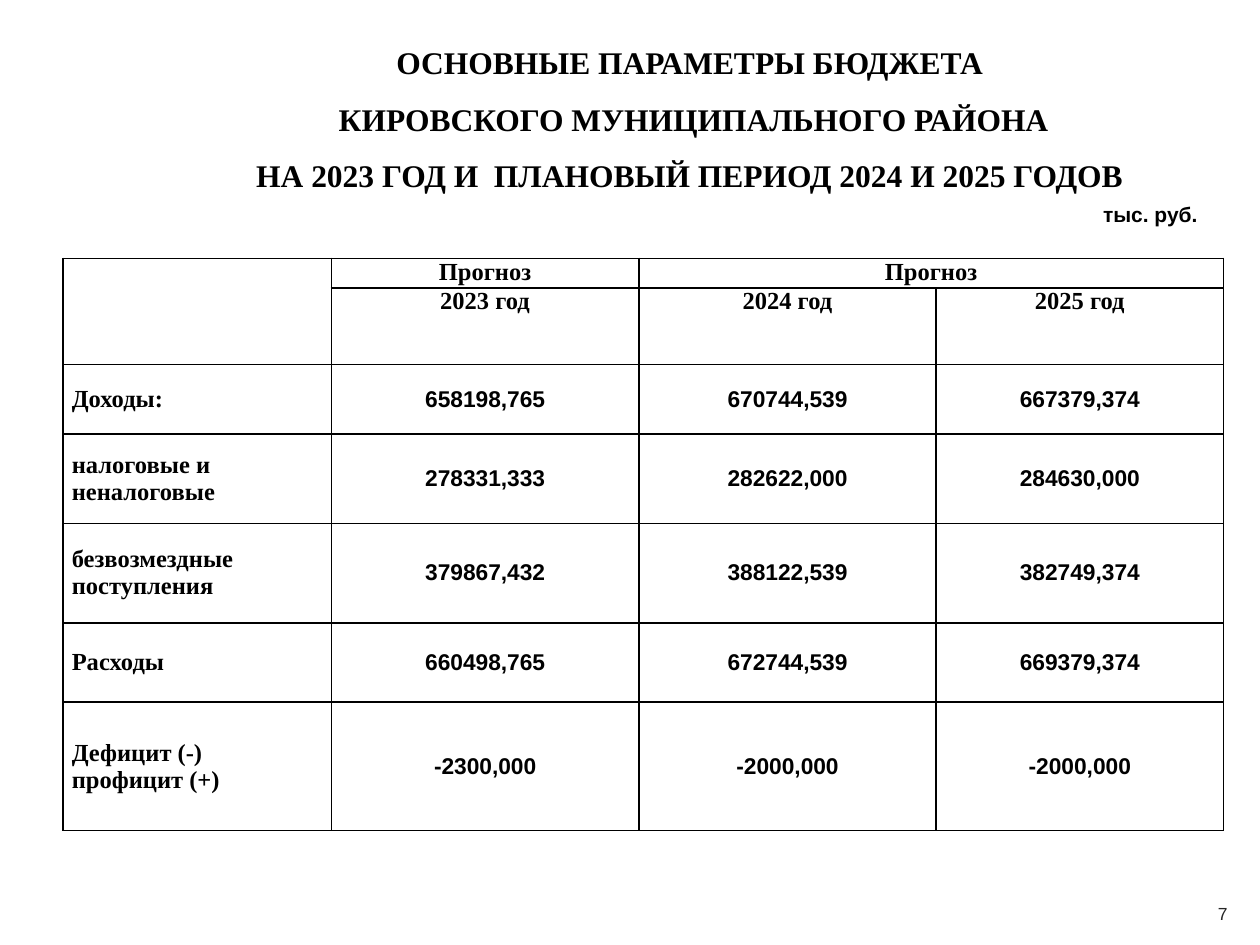
"""Build the slide with the main figures of the district budget."""
from dataclasses import dataclass

from lxml import etree
from pptx import Presentation, util as u
from pptx.dml.color import RGBColor
from pptx.enum import text
from pptx.oxml import ns

WIDE, HIGH = 10, 7.5
SERIF, SANS = "Times New Roman", "Arial"
INK, GREY, PAPER = "000000", "262626", "FFFFFF"
MID, LEFT, FULL = text.PP_ALIGN.CENTER, text.PP_ALIGN.LEFT, text.PP_ALIGN.JUSTIFY
COLS = (2.13, 2.44, 2.36, 2.28)
ROWS = (0.23, 0.61, 0.55, 0.71, 0.79, 0.63, 1.02)
SIDES = ("a:lnL", "a:lnR", "a:lnT", "a:lnB")


@dataclass(frozen=True)
class Style:
    """Look of a run of text and of its paragraph."""
    font: str
    size: float
    tone: str = INK
    bold: bool = True
    align: int = MID
    space: float = 1.0


@dataclass(frozen=True)
class Box:
    """Text box placed by shares of the slide's size."""
    left: float
    top: float
    width: float
    height: float
    lines: tuple
    style: Style
    wrap: bool = True
    grow: bool = True
    anchor: int = text.MSO_ANCHOR.TOP


@dataclass(frozen=True)
class Line:
    """Row of the table: its label, its values and the value margin."""
    label: tuple
    values: tuple
    align: int = LEFT
    inset: float = 0.07


BOXES = (
    Box(0.945, 0.94, 0.051, 0.053, ("7",), Style(SANS, 10, GREY, False),
        grow=False, anchor=text.MSO_ANCHOR.MIDDLE),
    Box(0.127, 0.019, 0.841, 0.195,
        ("ОСНОВНЫЕ ПАРАМЕТРЫ БЮДЖЕТА",
         " КИРОВСКОГО МУНИЦИПАЛЬНОГО РАЙОНА",
         "НА 2023 ГОД И  ПЛАНОВЫЙ ПЕРИОД 2024 И 2025 ГОДОВ"),
        Style(SERIF, 18, space=1.5)),
    Box(0.865, 0.207, 0.096, 0.04, ("тыс. руб.",), Style(SANS, 12), wrap=False),
)
HEADS = (("Прогноз", "Прогноз"), ("2023 год", "2024 год", "2025 год"))
LINES = (
    Line(("Доходы:",), ("658198,765", "670744,539", "667379,374"), FULL, 0.01),
    Line(("налоговые и неналоговые",),
         ("278331,333", "282622,000", "284630,000"), inset=0.01),
    Line(("безвозмездные поступления",),
         ("379867,432", "388122,539", "382749,374"), inset=0.01),
    Line(("Расходы",), ("660498,765", "672744,539", "669379,374"), FULL),
    Line(("Дефицит (-)", "профицит (+)"),
         ("-2300,000", "-2000,000", "-2000,000")),
)


def color(tone: str) -> RGBColor:
    """Turn a hex string into a colour."""
    return RGBColor.from_string(tone)


def write(frame, lines: tuple, style: Style) -> None:
    """Fill a text frame, one paragraph and run per line."""
    for i, words in enumerate(lines):
        para = frame.add_paragraph() if i else frame.paragraphs[0]
        para.alignment = style.align
        para.line_spacing = style.space
        run = para.add_run()
        run.text = words
        font = run.font
        font.name, font.size, font.bold = style.font, u.Pt(style.size), style.bold
        font.color.rgb = color(style.tone)


def draw_box(slide, box: Box) -> None:
    """Draw one text box."""
    shape = slide.shapes.add_textbox(
        u.Inches(box.left * WIDE), u.Inches(box.top * HIGH),
        u.Inches(box.width * WIDE), u.Inches(box.height * HIGH))
    frame = shape.text_frame
    frame.word_wrap = box.wrap
    frame.vertical_anchor = box.anchor
    if box.grow:
        frame.auto_size = text.MSO_AUTO_SIZE.SHAPE_TO_FIT_TEXT
    write(frame, box.lines, box.style)


def edge(cell) -> None:
    """Clear a cell's margins and fill, and rule its four sides."""
    cell.margin_left = cell.margin_right = u.Inches(0.07)
    cell.margin_top = cell.margin_bottom = 0
    props = cell._tc.get_or_add_tcPr()
    for side in SIDES:
        rule = etree.SubElement(props, ns.qn(side), w=str(u.Pt(1)))
        fill = etree.SubElement(rule, ns.qn("a:solidFill"))
        etree.SubElement(fill, ns.qn("a:srgbClr"), val=INK)
    cell.fill.background()


def draw_table(slide) -> None:
    """Draw the budget table."""
    shape = slide.shapes.add_table(
        len(ROWS), len(COLS), u.Inches(0.05 * WIDE), u.Inches(2.05),
        u.Inches(sum(COLS)), u.Inches(sum(ROWS)))
    table = shape.table
    table.first_row = table.horz_banding = False
    for col, width in zip(table.columns, COLS):
        col.width = u.Inches(width)
    for row, height in zip(table.rows, ROWS):
        row.height = u.Inches(height)
    for cell in table.iter_cells():
        edge(cell)
    table.cell(0, 0).merge(table.cell(1, 0))
    table.cell(0, 2).merge(table.cell(0, 3))
    for r, heads in enumerate(HEADS):
        for c, head in enumerate(heads, 1):
            write(table.cell(r, c).text_frame, (head,), Style(SERIF, 14))
    for r, line in enumerate(LINES, len(HEADS)):
        name = table.cell(r, 0)
        name.vertical_anchor = text.MSO_ANCHOR.MIDDLE
        write(name.text_frame, line.label, Style(SERIF, 14, align=line.align))
        for c, value in enumerate(line.values, 1):
            cell = table.cell(r, c)
            cell.vertical_anchor = text.MSO_ANCHOR.MIDDLE
            cell.margin_left = cell.margin_right = u.Inches(line.inset)
            write(cell.text_frame, (value,), Style(SANS, 13))


def main() -> None:
    """Build and save the slide."""
    deck = Presentation()
    deck.slide_width, deck.slide_height = u.Inches(WIDE), u.Inches(HIGH)
    slide = deck.slides.add_slide(deck.slide_layouts[6])
    back = slide.background.fill
    back.solid()
    back.fore_color.rgb = color(PAPER)
    for box in BOXES:
        draw_box(slide, box)
    draw_table(slide)
    deck.save("out.pptx")


if __name__ == "__main__":
    main()
